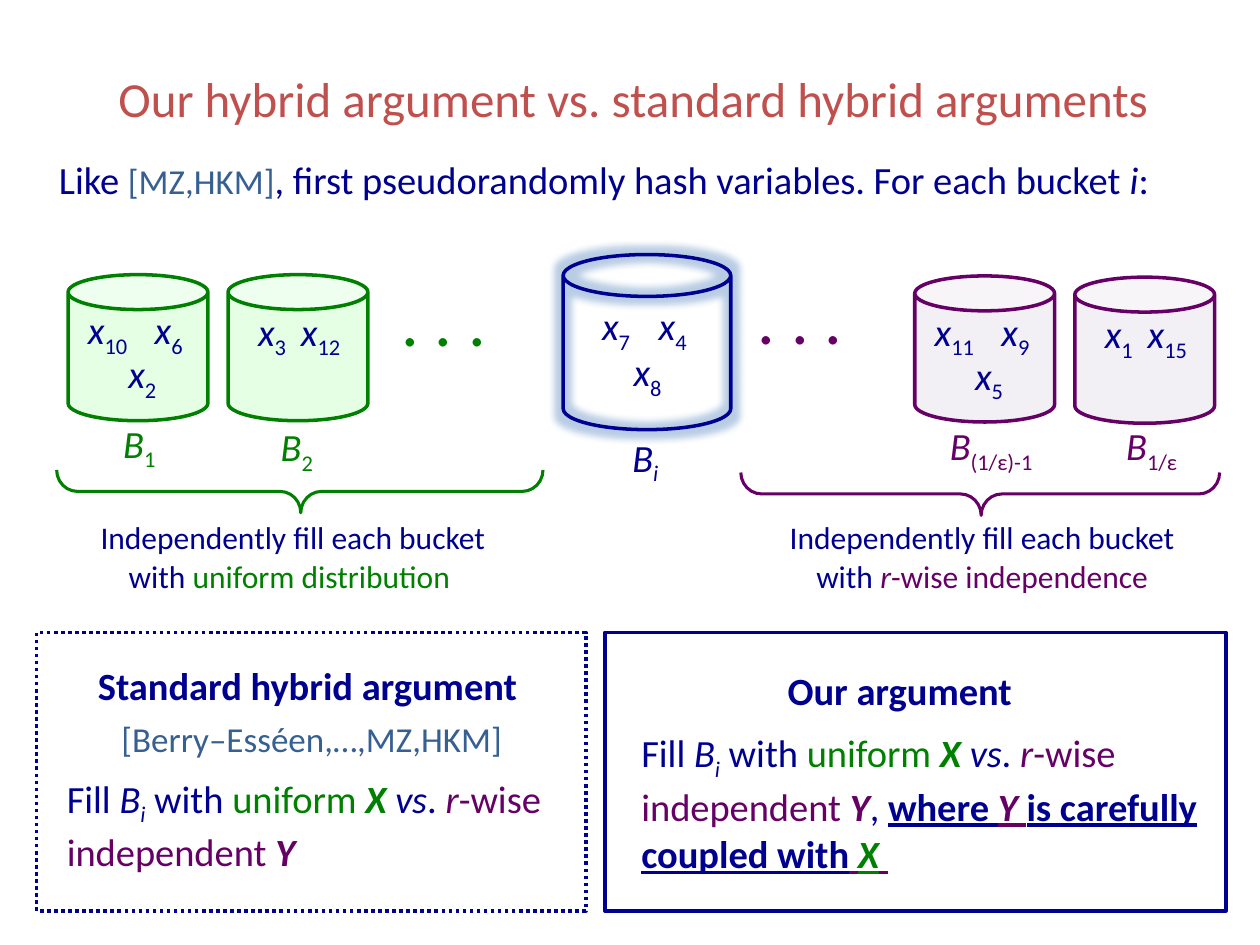
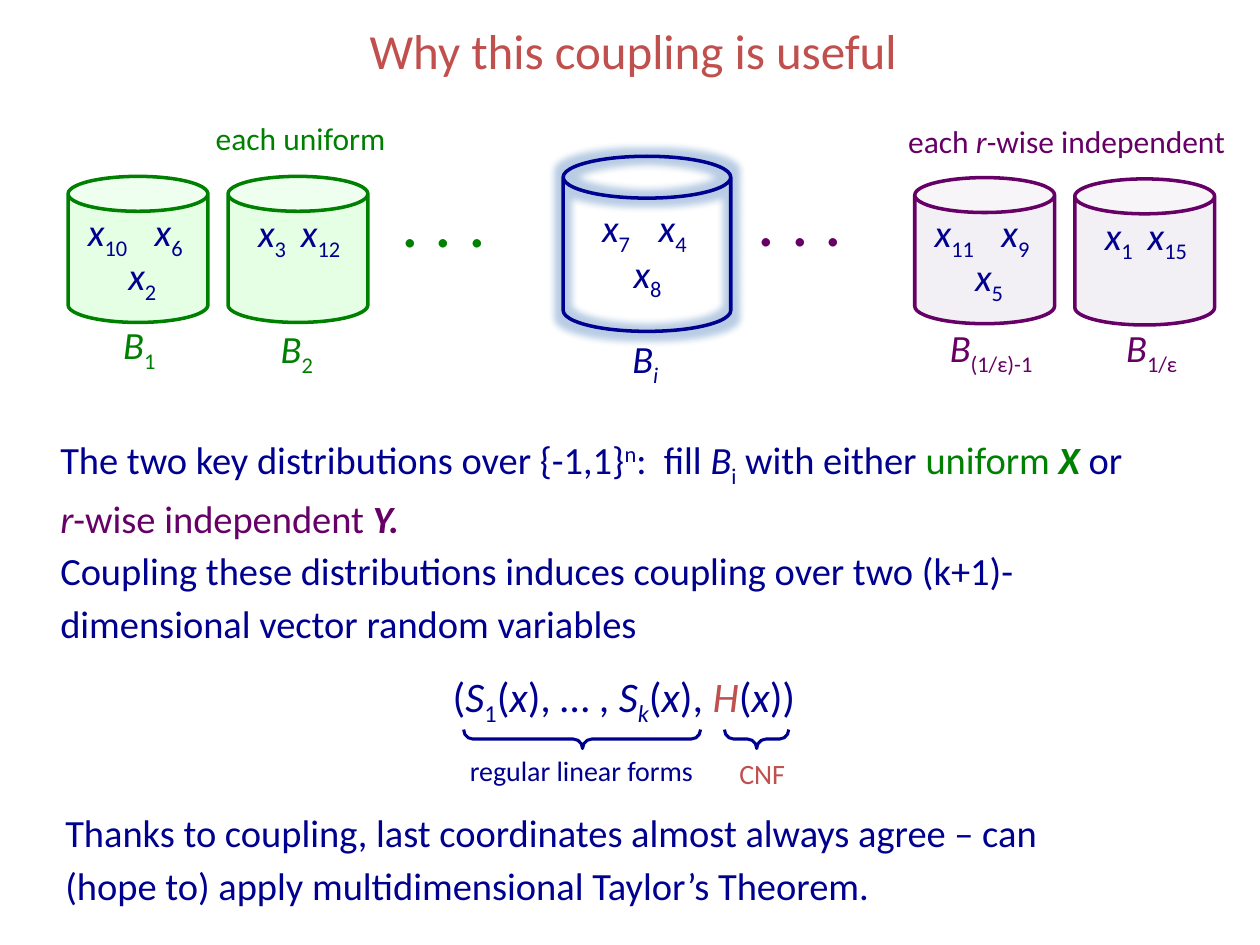
"""Build two slides on a hybrid argument with hashed buckets."""
import pptx
import pptx.util
import pptx.dml.color
import pptx.enum.dml
import pptx.enum.shapes
import pptx.enum.text
from lxml import etree

RGB = pptx.dml.color.RGBColor
NAVY = RGB(0x00, 0x00, 0x90)
GREEN = RGB(0x00, 0x80, 0x00)
PLUM = RGB(0x66, 0x00, 0x66)
RED = RGB(0xC0, 0x50, 0x4D)
STEEL = RGB(0x37, 0x60, 0x92)
MINT = RGB(0xCC, 0xFF, 0xCC)
LILAC = RGB(0xE6, 0xE0, 0xEC)
GLOW = RGB(0x4F, 0x81, 0xBD)
TONES = {"n": NAVY, "g": GREEN, "p": PLUM, "r": RED, "s": STEEL}
MARKS = {"_": "-25000", "^": "30000"}

FONT = "Calibri"
SIZE = (10, 7.5)
INCH = pptx.util.Inches
PT = pptx.util.Pt
KIND = pptx.enum.shapes.MSO_SHAPE
ALIGN = pptx.enum.text.PP_ALIGN
MID = pptx.enum.text.MSO_ANCHOR.MIDDLE
DOTTED = pptx.enum.dml.MSO_LINE.ROUND_DOT
NS = "http://schemas.openxmlformats.org/drawingml/2006/main"

SMALL = (1.11, 1.16)
LARGE = (1.33, 1.39)
TRIO = [(0.06, 0.21), (0.59, 0.21), (0.38, 0.56)]
PAIR = [(0.14, 0.22), (0.48, 0.22)]
WIDE = [(0.21, 0.34), (0.66, 0.34), (0.46, 0.7)]
BUCKETS = [
    (0.54, 0.16, SMALL, "g", MINT, TRIO, ["10", "6", "2"], (0.34, 1.11), "1"),
    (1.81, 0.16, SMALL, "g", MINT, PAIR, ["3", "12"], (0.32, 1.14), "2"),
    (4.47, 0, LARGE, "n", None, WIDE, ["7", "4", "8"], (0.45, 1.38), "i"),
    (7.26, 0.17, SMALL, "p", LILAC, TRIO, ["11", "9", "5"], (0.18, 1.12), "(1/ε)-1"),
    (8.53, 0.18, SMALL, "p", LILAC, PAIR, ["1", "15"], (0.31, 1.11), "1/ε"),
]
DOTS = [(2.86, 0.38, "g"), (5.69, 0.37, "p")]

FILL = [("Fill ", "n"), ("B", "ni"), ("i", "ni_"), (" with ", "n"), ("uniform ", "g"),
        ("X ", "gbi"), ("vs", "ni"), (". ", "n"), ("r", "pi"),
        ("-wise independent ", "p"), ("Y", "pbi")]
COUPLED = [(", ", "n"), ("where", "nbu"), (" ", "nu"), ("Y", "pbiu"), (" ", "pu"),
           ("is carefully coupled with", "nbu"), (" ", "pu"), ("X", "gbiu"), (" ", "pu")]

CENTER = {"alignment": ALIGN.CENTER}
TIGHT = {"line_spacing": PT(33), "space_after": PT(9)}
NOTE = {"line_spacing": PT(22), "space_after": PT(9)}
HEAD = {"line_spacing": PT(24), **CENTER}
CITE = {"line_spacing": PT(29), "space_after": PT(9), **CENTER}
CLAIM = {"line_spacing": PT(27), "space_after": PT(9)}
LINES = {"line_spacing": PT(30)}
BIG = {"line_spacing": PT(38.6), **CENTER}
FLUSH = {"margin_top": 0}
INSET = {"margin_left": INCH(0.2)}
MIDDLE = {"vertical_anchor": MID}

PAGES = [
    {
        "title": "Our hybrid argument vs. standard hybrid arguments",
        "top": -0.12,
        "row": 2.02,
        "frames": [(4.8, 4.93, None), (0.29, 4.36, DOTTED)],
        "braces": [(0.45, 3.73, 3.86, 0.34, "g"), (5.88, 3.75, 3.8, 0.34, "p")],
        "texts": [
            ((0.37, 1.3, 9.46, 0.56), 22, FLUSH, [(NOTE, [
                ("Like ", "n"), ("[MZ,HKM]", "s"),
                (", first pseudorandomly hash variables. For each bucket ", "n"),
                ("i", "ni"), (":", "n")])]),
            ((0.48, 4.11, 3.69, 0.56), 18, FLUSH, [({**NOTE, **CENTER}, [
                ("Independently fill each bucket with ", "n"),
                ("uniform distribution ", "g")])]),
            ((5.95, 4.11, 3.69, 0.56), 18, FLUSH, [({**NOTE, **CENTER}, [
                ("Independently fill each bucket with ", "n"),
                ("r", "pi"), ("-wise independence", "p")])]),
            ((0.26, 5.29, 4.43, 1.02), 22, FLUSH, [
                (HEAD, [("Standard hybrid argument ", "nb")]),
                (CITE, [("[Berry–Esséen,…,MZ,HKM]", "s")])]),
            ((0.33, 6.14, 4.71, 0.86), 22, INSET, [(CLAIM, FILL)]),
            ((5.12, 5.33, 4.11, 0.64), 22, FLUSH, [(HEAD, [("Our argument ", "nb")])]),
            ((4.89, 5.78, 4.9, 1.24), 22, INSET, [(CLAIM, FILL + COUPLED)]),
        ],
    },
    {
        "title": "Why this coupling is useful",
        "top": -0.5,
        "row": 1.24,
        "frames": [],
        "braces": [(3.68, 5.79, 1.88, 0.15, "n"), (5.75, 5.79, 0.51, 0.15, "n")],
        "texts": [
            ((0.54, 0.94, 3.69, 0.56), 18, FLUSH, [
                ({**NOTE, **CENTER}, [("each uniform", "g")])]),
            ((6.62, 0.96, 3.69, 0.56), 18, FLUSH, [({**NOTE, **CENTER}, [
                ("each ", "p"), ("r", "pi"), ("-wise independent", "p")])]),
            ((0.38, 3.46, 8.99, 0.82), 22, FLUSH, [
                (LINES, [
                    ("The two key distributions over {-1,1}", "n"), ("n", "n^"),
                    (":  fill ", "n"), ("B", "ni"), ("i", "n_"), (" with either ", "n"),
                    ("uniform ", "g"), ("X ", "gbi"), ("or ", "n"), ("\n", "n"),
                    ("r", "pi"), ("-wise independent ", "p"), ("Y.", "pbi")]),
                (LINES, [("Coupling these distributions induces coupling over two "
                          "(k+1)-dimensional vector random variables", "n")])]),
            ((2.94, 5.15, 4.1, 0.71), 24, MIDDLE, [(BIG, [
                ("(", "n"), ("S", "ni"), ("1", "n_"), ("(", "n"), ("x", "ni"),
                ("), … , ", "n"), ("S", "ni"), ("k", "ni_"), ("(", "n"), ("x", "ni"),
                ("), ", "n"), ("H", "ri"), ("(", "n"), ("x", "ni"), (")) ", "n")])]),
            ((3.34, 5.71, 2.55, 0.54), 16, MIDDLE, [
                (BIG, [("regular linear forms", "n")])]),
            ((5.38, 5.73, 1.34, 0.54), 16, MIDDLE, [(BIG, [("CNF", "r")])]),
            ((0.42, 6.52, 8.57, 0.54), 22, MIDDLE, [(LINES, [
                ("Thanks to coupling, last coordinates almost always agree – can "
                 "(hope to) apply multidimensional Taylor’s Theorem.", "n")])]),
        ],
    },
]


def apply(item, look):
    for key, value in look.items():
        setattr(item, key, value)


def write(frame, size, look, paras):
    apply(frame, {"word_wrap": True, "auto_size": pptx.enum.text.MSO_AUTO_SIZE.NONE, **look})
    for num, (form, runs) in enumerate(paras):
        para = frame.paragraphs[0] if num == 0 else frame.add_paragraph()
        apply(para, {"space_before": PT(0), **form})
        for text, code in runs:
            if text == "\n":
                para.add_line_break()
                continue
            run = para.add_run()
            run.text = text
            apply(run.font, {"name": FONT, "size": PT(20 if code == "s" else size),
                             "bold": "b" in code, "italic": "i" in code,
                             "underline": "u" in code})
            run.font.color.rgb = TONES[code[0]]
            for mark in MARKS:
                if mark in code:
                    run.font._element.set("baseline", MARKS[mark])


def label(slide, box, size, look, paras):
    shape = slide.shapes.add_textbox(*map(INCH, box))
    write(shape.text_frame, size, look, paras)


def draw(slide, kind, box, tone, width=2, fill=None):
    shape = slide.shapes.add_shape(kind, *map(INCH, box))
    shape.shadow.inherit = False
    apply(shape.line, {"width": PT(width)})
    shape.line.color.rgb = TONES[tone]
    if fill is None:
        shape.fill.background()
    else:
        shape.fill.solid()
        shape.fill.fore_color.rgb = fill
        fade(shape._element.spPr.find(f"{{{NS}}}solidFill")[0], 50)
    return shape


def fade(color, share):
    etree.SubElement(color, f"{{{NS}}}alpha", val=str(share * 1000))


def shine(shape):
    effects = shape._element.spPr.find(f"{{{NS}}}effectLst")
    glow = etree.SubElement(effects, f"{{{NS}}}glow", rad=str(PT(8)))
    color = etree.SubElement(glow, f"{{{NS}}}srgbClr", val=str(GLOW))
    fade(color, 40)


def brace(slide, left, top, width, height, tone):
    turn = (width - height) / 2
    shape = draw(slide, KIND.LEFT_BRACE, (left + turn, top - turn, height, width), tone, 1.75)
    shape.rotation = 270
    shape.adjustments[0] = 0.485
    shape.adjustments[1] = 0.502


def bucket(slide, row, data):
    left, drop, size, tone, fill, spots, names, tag, sub = data
    top = row + drop
    can = draw(slide, KIND.CAN, (left, top, *size), tone, fill=fill)
    if fill is None:
        shine(can)
    for (right, down), name in zip(spots, names):
        label(slide, (left + right, top + down, 0.66, 0.56), 22, FLUSH,
              [(TIGHT, [("x", "ni"), (name, "n_")])])
    code = tone + ("i_" if sub == "i" else "_")
    label(slide, (left + tag[0], top + tag[1], 1.07, 0.56), 22, FLUSH,
          [(TIGHT, [("B", tone + "i"), (sub, code)])])


def build(deck, page):
    slide = deck.slides.add_slide(deck.slide_layouts[5])
    title = slide.shapes.title
    apply(title, dict(zip(("left", "top", "width", "height"),
                          map(INCH, (0.04, page["top"], 9.97, 1.73)))))
    write(title.text_frame, 28, MIDDLE, [(BIG, [(page["title"], "r")])])
    for left, width, dash in page["frames"]:
        frame = draw(slide, KIND.RECTANGLE, (left, 5.02, width, 2.21), "n")
        frame.line.dash_style = dash
    for data in BUCKETS:
        bucket(slide, page["row"], data)
    for left, drop, tone in DOTS:
        label(slide, (left, page["row"] + drop, 1.57, 0.56), 40, FLUSH,
              [({**TIGHT, **CENTER}, [(". . .  ", tone)])])
    for data in page["braces"]:
        brace(slide, *data)
    for data in page["texts"]:
        label(slide, *data)


def main():
    deck = pptx.Presentation()
    deck.slide_width, deck.slide_height = map(INCH, SIZE)
    for page in PAGES:
        build(deck, page)
    deck.save("out.pptx")


if __name__ == "__main__":
    main()
